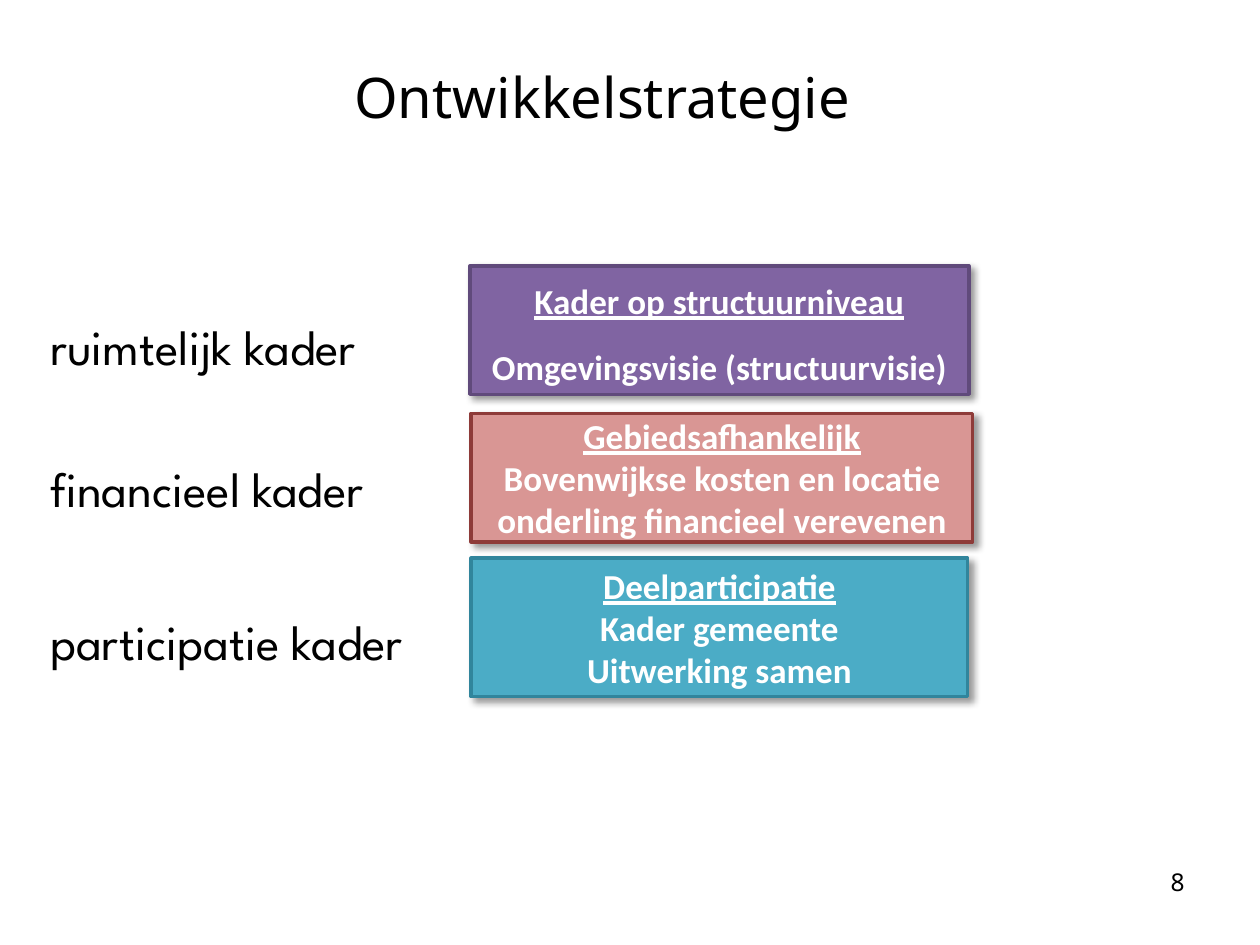
import pptx
import pptx.dml.color
import pptx.enum.shapes
import pptx.enum.text
import pptx.oxml
import pptx.oxml.ns
import pptx.util

Inches = pptx.util.Inches
Pt = pptx.util.Pt
RGBColor = pptx.dml.color.RGBColor
ALIGN = pptx.enum.text.PP_ALIGN
ANCHOR = pptx.enum.text.MSO_ANCHOR

BLACK = RGBColor(0x00, 0x00, 0x00)
WHITE = RGBColor(0xFF, 0xFF, 0xFF)
PURPLE = RGBColor(0x80, 0x64, 0xA2)
PURPLE_EDGE = RGBColor(0x60, 0x4A, 0x7B)
ROSE = RGBColor(0xD9, 0x96, 0x94)
ROSE_EDGE = RGBColor(0x8E, 0x3B, 0x39)
TEAL = RGBColor(0x4B, 0xAC, 0xC6)
TEAL_EDGE = RGBColor(0x31, 0x85, 0x9C)

SHADOW = (
    f'<a:effectLst {pptx.oxml.ns.nsdecls("a")}>'
    '<a:outerShdw blurRad="50800" dist="38100" dir="2700000" algn="tl" rotWithShape="0">'
    '<a:srgbClr val="000000"><a:alpha val="40000"/></a:srgbClr>'
    '</a:outerShdw></a:effectLst>'
)

LABELS = [
    ("ruimtelijk kader", (0.3, 2.38, 3.21, 0.79)),
    ("financieel kader", (0.3, 3.51, 3.44, 0.79)),
    ("participatie kader", (0.3, 4.72, 3.3, 0.79)),
]
FRAMES = [
    (["Kader op structuurniveau", "Omgevingsvisie (structuurvisie)"],
     (3.73, 2.11, 3.96, 1.02), PURPLE, PURPLE_EDGE, 1.15, 10),
    (["Gebiedsafhankelijk", "Bovenwijkse kosten en locatie onderling financieel verevenen"],
     (3.74, 3.28, 3.98, 1.02), ROSE, ROSE_EDGE, 1, 0),
    (["Deelparticipatie", "Kader gemeente", "Uitwerking samen"],
     (3.74, 4.43, 3.94, 1.1), TEAL, TEAL_EDGE, 1, 0),
]


def style(p, size, name, color, align):
    """Set the font and alignment of a paragraph."""
    p.alignment = align
    p.font.size = Pt(size)
    p.font.name = name
    p.font.color.rgb = color


def add_title(s, text, box):
    """Place and format the title placeholder."""
    sp = s.shapes.title
    sp.left, sp.top, sp.width, sp.height = map(Inches, box)
    tf = sp.text_frame
    tf.text = text
    tf.vertical_anchor = ANCHOR.MIDDLE
    style(tf.paragraphs[0], 32, "Noto Sans", BLACK, ALIGN.CENTER)


def add_text(s, text, box, size, name, align, margin_top=0.05):
    """Add a wrapped one-paragraph text box."""
    tf = s.shapes.add_textbox(*map(Inches, box)).text_frame
    tf.word_wrap = True
    tf.margin_top = Inches(margin_top)
    tf.text = text
    style(tf.paragraphs[0], size, name, BLACK, align)


def add_frame(s, lines, box, fill, edge, spacing, after):
    """Add a shadowed rectangle with an underlined heading and text below."""
    sp = s.shapes.add_shape(pptx.enum.shapes.MSO_SHAPE.RECTANGLE, *map(Inches, box))
    sp.fill.solid()
    sp.fill.fore_color.rgb = fill
    sp.line.color.rgb = edge
    sp.line.width = Pt(2)
    sp._element.spPr.append(pptx.oxml.parse_xml(SHADOW))
    tf = sp.text_frame
    tf.word_wrap = True
    tf.vertical_anchor = ANCHOR.MIDDLE
    tf.text = "\n".join(lines)
    for i, p in enumerate(tf.paragraphs):
        style(p, 20, "Calibri", WHITE, ALIGN.CENTER)
        p.font.bold = True
        p.font.underline = i == 0
        p.line_spacing = float(spacing)
        p.space_after = Pt(after)


def main():
    """Build and save the slide."""
    prs = pptx.Presentation()
    prs.slide_width, prs.slide_height = Inches(10), Inches(7.5)
    s = prs.slides.add_slide(prs.slide_layouts[5])
    add_title(s, "Ontwikkelstrategie", (0.28, 0, 9, 1.53))
    for frame in FRAMES:
        add_frame(s, *frame)
    for text, box in LABELS:
        add_text(s, text, box, 28, "League Spartan", ALIGN.LEFT, 0.13)
    add_text(s, "8", (7.17, 6.83, 2.33, 0.52), 14, "Noto Sans", ALIGN.RIGHT)
    prs.save("out.pptx")


if __name__ == "__main__":
    main()
